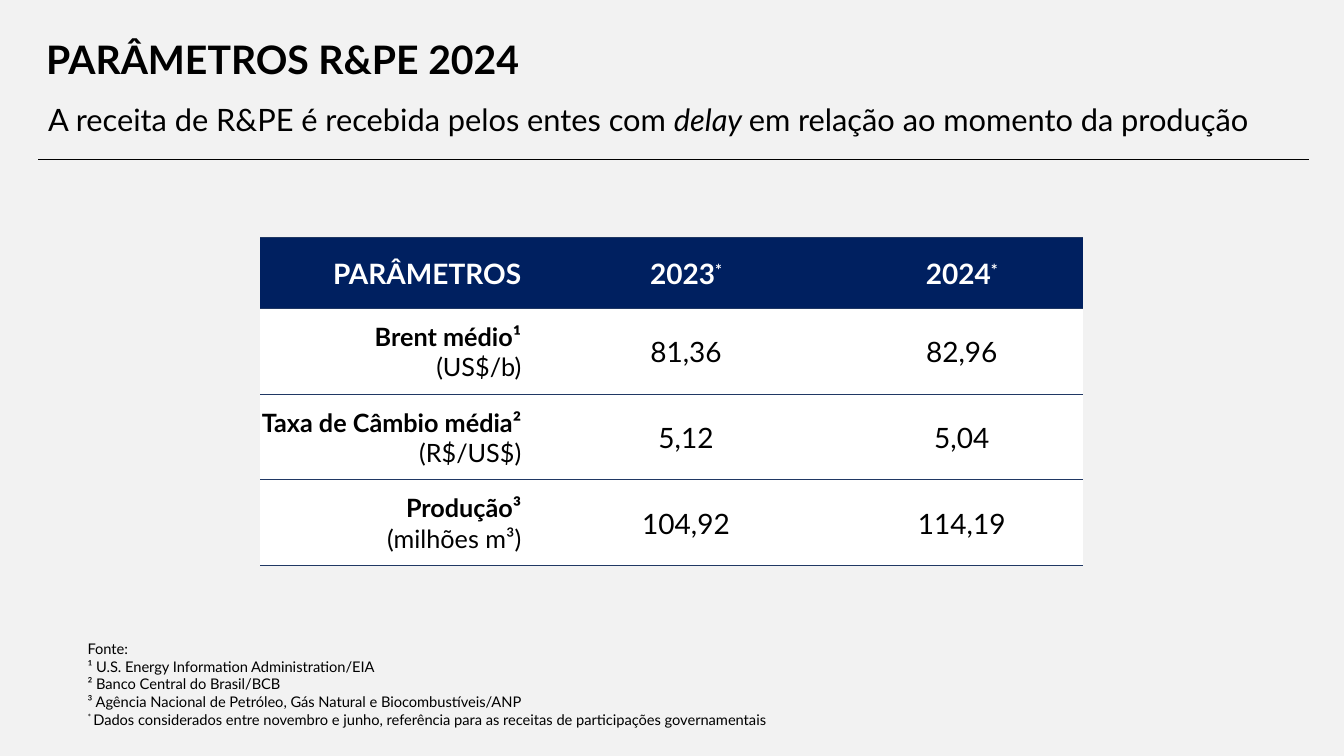
from lxml import etree
from pptx import Presentation
from pptx.dml.color import RGBColor
from pptx.enum.shapes import MSO_CONNECTOR
from pptx.enum.text import MSO_ANCHOR as Anchor, PP_ALIGN as Align
from pptx.oxml.ns import qn
from pptx.util import Inches, Pt

NAVY, RULE, BLACK, WHITE, PAPER = "002060", "203864", "000000", "FFFFFF", "F2F2F2"


def color(value):
    return RGBColor.from_string(value)


class SlideBuilder:
    font_name = "Lato"

    def __init__(self, presentation):
        self.slide = presentation.slides.add_slide(presentation.slide_layouts[6])
        fill = self.slide.background.fill
        fill.solid()
        fill.fore_color.rgb = color(PAPER)

    def fill_paragraph(self, paragraph, runs, size, ink=BLACK, bold=False, align=Align.LEFT,
                       spacing=None):
        """Each run is a pair of text and style: "", "italic" or "super"."""
        for text, style in runs:
            run = paragraph.add_run()
            run.text = text
            if style == "italic":
                run.font.italic = True
            elif style == "super":
                run.font._element.set("baseline", "30000")
        paragraph.alignment = align
        if spacing:
            paragraph.line_spacing = spacing
        font = paragraph.font
        font.name, font.size, font.bold = self.font_name, Pt(size), bold
        font.color.rgb = color(ink)

    def text(self, left, top, width, height, lines, size, anchor=Anchor.MIDDLE, **style):
        box = self.slide.shapes.add_textbox(Inches(left), Inches(top), Inches(width), Inches(height))
        frame = box.text_frame
        frame.word_wrap = True
        frame.vertical_anchor = anchor
        for index, runs in enumerate(lines):
            paragraph = frame.add_paragraph() if index else frame.paragraphs[0]
            self.fill_paragraph(paragraph, runs, size, **style)

    def line(self, left, top, width):
        connector = self.slide.shapes.add_connector(
            MSO_CONNECTOR.STRAIGHT, Inches(left), Inches(top), Inches(left + width), Inches(top))
        connector.line.color.rgb = color(BLACK)
        connector.line.width = Pt(0.5)
        etree.SubElement(connector._element.spPr, qn("a:effectLst"))

    def table(self, left, top, widths, heights):
        table = self.slide.shapes.add_table(
            len(heights), len(widths), Inches(left), Inches(top),
            Inches(sum(widths)), Inches(sum(heights))).table
        table.first_row = table.horz_banding = False
        for column, width in zip(table.columns, widths):
            column.width = Inches(width)
        for row, height in zip(table.rows, heights):
            row.height = Inches(height)
        for row_index, row in enumerate(table.rows):
            for cell in row.cells:
                self.style_cell(cell, NAVY if row_index == 0 else WHITE)
        return table

    def style_cell(self, cell, fill_color):
        cell.vertical_anchor = Anchor.MIDDLE
        cell.margin_left = cell.margin_right = cell.margin_top = Inches(0.01)
        cell.margin_bottom = 0
        properties = cell._tc.get_or_add_tcPr()
        for side in ("lnL", "lnR", "lnT", "lnB"):
            border = etree.SubElement(properties, qn("a:" + side), w=str(Pt(1)))
            if side in ("lnT", "lnB"):
                solid = etree.SubElement(border, qn("a:solidFill"))
                etree.SubElement(solid, qn("a:srgbClr"), val=RULE)
            else:
                etree.SubElement(border, qn("a:noFill"))
        cell.fill.solid()
        cell.fill.fore_color.rgb = color(fill_color)


def main():
    presentation = Presentation()
    presentation.slide_width, presentation.slide_height = Inches(13.33), Inches(7.5)
    builder = SlideBuilder(presentation)

    # Heading
    builder.text(0.36, 0.22, 9.4, 0.79, [[("PARÂMETROS R&PE 2024", "")]], 28, bold=True, spacing=0.9)
    builder.line(0.38, 1.58, 12.6)

    # Parameter table, with narrow spacer columns between the three data columns
    table = builder.table(2.58, 2.36, [2.6, 0.59, 2.07, 0.5, 2.4], [0.7] + [0.85] * 3)
    header = [(0, [("PARÂMETROS", "")], Align.RIGHT)]
    header += [(column, [(year, ""), ("*", "super")], Align.CENTER)
               for column, year in ((2, "2023"), (4, "2024"))]
    for column, runs, align in header:
        builder.fill_paragraph(table.cell(0, column).text_frame.paragraphs[0], runs, 20,
                               WHITE, True, align)

    parameters = [
        ("Brent médio¹", "(US$/b)", "81,36", "82,96"),
        ("Taxa de Câmbio média²", "(R$/US$)", "5,12", "5,04"),
        ("Produção³", "(milhões m³)", "104,92", "114,19"),
    ]
    for row, (name, unit, *values) in enumerate(parameters, 1):
        frame = table.cell(row, 0).text_frame
        builder.fill_paragraph(frame.paragraphs[0], [(name, "")], 18, bold=True, align=Align.RIGHT)
        builder.fill_paragraph(frame.add_paragraph(), [(unit, "")], 18, align=Align.RIGHT)
        for column, value in zip((2, 4), values):
            builder.fill_paragraph(table.cell(row, column).text_frame.paragraphs[0],
                                   [(value, "")], 20, align=Align.CENTER)

    # Sources
    sources = [
        [("Fonte:", "")],
        [("¹ U.S. Energy Information Administration/EIA", "")],
        [("² Banco Central do Brasil/BCB", "")],
        [("³ Agência Nacional de Petróleo, Gás Natural e Biocombustíveis/ANP", "")],
        [("* ", "super"), ("Dados considerados entre novembro e junho, referência para as receitas "
                           "de participações governamentais", "")],
    ]
    builder.text(0.77, 6.3, 11.6, 0.98, sources, 10.5, Anchor.TOP)

    # Subtitle
    subtitle = [("A receita de R&PE é recebida pelos entes com ", ""), ("delay ", "italic"),
                ("em relação ao momento da produção", "")]
    builder.text(0.38, 0.85, 12.6, 0.59, [subtitle], 22, spacing=1.2)

    presentation.save("out.pptx")


if __name__ == "__main__":
    main()
